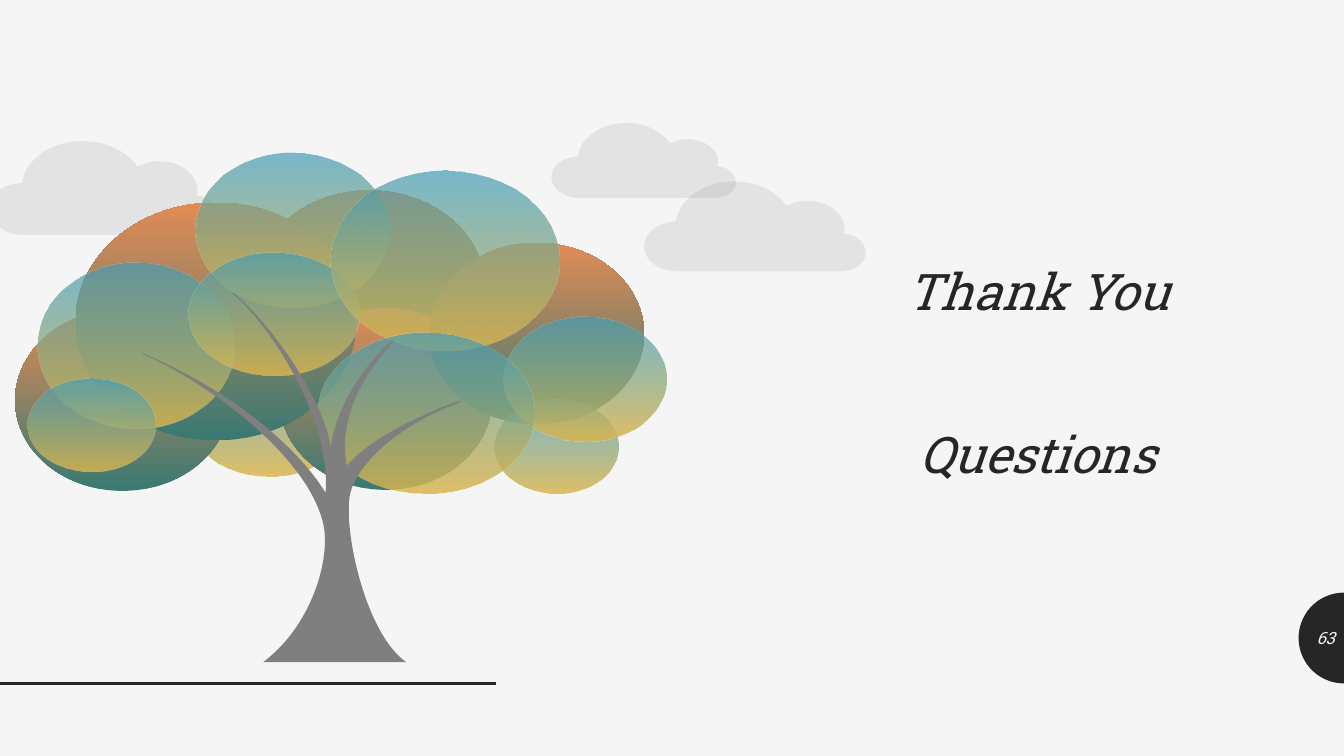
import math
from dataclasses import dataclass

import pptx
import pptx.dml.color
import pptx.enum.shapes
import pptx.enum.text
import pptx.oxml
import pptx.oxml.ns
import pptx.oxml.xmlchemy
import pptx.slide
import pptx.util

COLORS: dict[str, str] = {
    "paper": "F5F5F5",
    "ink": "262626",
    "gray": "7F7F7F",
    "teal": "397972",
    "orange": "E28B55",
    "gold": "DCB64D",
    "blue": "439EB7",
}
FONT = "Roboto Slab"
ROWS = 75
SLIDE_HEIGHT = pptx.util.Inches(7.5)
SLIDE_WIDTH = pptx.util.Inches(13.333)
CELL = SLIDE_HEIGHT / ROWS  # square cells; all positions below count them
COLUMNS = SLIDE_WIDTH / CELL

Point = tuple[float, float]
# One point ends a straight segment; three are a Bezier's handles and end.
Segment = tuple[Point, ...]


@dataclass(frozen=True)
class Area:
    column: float
    row: float
    columns: float
    rows: float

    def lengths(self) -> tuple[pptx.util.Emu, ...]:
        return tuple(cells(n) for n in (self.column, self.row, self.columns, self.rows))


@dataclass(frozen=True)
class Foliage:
    bottom: str
    top: str
    bottom_opacity: int
    top_opacity: int


@dataclass(frozen=True)
class Placement:
    column: float = 0
    row: float = 0
    size: float = 1


@dataclass(frozen=True)
class Lettering:
    size: float
    color: str
    align: pptx.enum.text.PP_ALIGN
    anchor: pptx.enum.text.MSO_ANCHOR
    line_spacing: float = 1.0
    gap: float = 0


AUTUMN = Foliage("teal", "orange", 100, 100)
SUMMER = Foliage("gold", "blue", 85, 70)
CROWN: list[tuple[Foliage, list[Area]]] = [
    (SUMMER, [Area(18.6, 34.9, 16.2, 12.4)]),
    (AUTUMN, [
        Area(25.2, 18.9, 22.9, 19.3),
        Area(27.7, 30.6, 21.1, 18),
        Area(1.5, 30.7, 21.3, 18),
        Area(42.6, 24.1, 21.3, 18),
        Area(7.5, 20.1, 27.8, 23.6),
    ]),
    (SUMMER, [
        Area(3.7, 26.1, 19.6, 16.4),
        Area(19.4, 15.1, 19.1, 15.4),
        Area(49.1, 39.6, 12.3, 9.4),
        Area(18.7, 25.1, 17, 12.2),
        Area(2.7, 37.6, 12.7, 9.2),
        Area(32.8, 16.9, 22.7, 17.9),
        Area(49.9, 31.4, 16.2, 12.4),
        Area(31.5, 33, 21.5, 16),
    ]),
]

CLOUD_OUTLINE: list[Segment] = [
    ((9.3, 0),),
    ((11.4, 0), (13.2, 0.8), (14.3, 2)),
    ((14.7, 2.5),),
    ((15.3, 2.3),),
    ((15.8, 2.1), (16.3, 2), (16.8, 2)),
    ((19, 2), (20.7, 3.3), (20.7, 4.9)),
    ((20.6, 5.4),),
    ((21.3, 5.5),),
    ((22.2, 5.8), (22.9, 6.5), (22.9, 7.4)),
    ((22.9, 8.5), (21.7, 9.3), (20.2, 9.3)),
    ((3.5, 9.3),),
    ((1.6, 9.3), (0, 8.2), (0, 6.7)),
    ((0, 5.5), (1.2, 4.4), (2.8, 4.2)),
    ((3.3, 4.1),),
    ((3.4, 3.6),),
    ((4, 1.6), (6.4, 0), (9.3, 0)),
]
LEFT_CLOUD = Placement(-1.1, 14, 1)
RIGHT_CLOUDS = [Placement(63.9, 18, 0.96), Placement(54.7, 12.2, 0.8)]

TRUNK_OUTLINE: list[Segment] = [
    ((40.3, 65.7),),
    ((36.3, 62.9), (34.1, 52.9), (34.7, 49.2)),
    ((35.4, 45.4), (41.2, 41.4), (45.5, 40)),
    ((45.8, 39.8), (45.8, 39.7), (45.5, 39.8)),
    ((45.3, 39.8), (37.5, 42.6), (34.4, 46.2)),
    ((33.4, 40.6), (37, 36.2), (39, 33.9)),
    ((39.1, 33.8), (39, 33.7), (38.8, 33.8)),
    ((37.5, 35), (33.6, 39.1), (32.8, 44.3)),
    ((32.1, 39.5), (26.7, 31.9), (23.1, 29)),
    ((23.1, 29), (23, 29.2), (23.1, 29.2)),
    ((26.1, 31.5), (32.9, 41), (32.3, 48.9)),
    ((29.5, 44.3), (23, 38.8), (14.1, 35)),
    ((14, 35), (14, 35.1), (14.1, 35.1)),
    ((20.5, 37.9), (30.6, 45.2), (32.1, 52.1)),
    ((32.8, 55.7), (30.8, 62.2), (26.1, 65.7)),
]

BADGE_ROW, BADGE_RADIUS, BADGE_STEPS = 63.3, 4.5, 48
BADGE_OUTLINE: list[Segment] = [
    ((COLUMNS - BADGE_RADIUS * math.sin(math.pi * step / BADGE_STEPS),
      BADGE_ROW - BADGE_RADIUS * math.cos(math.pi * step / BADGE_STEPS)),)
    for step in range(BADGE_STEPS + 1)
]


def cells(count: float) -> pptx.util.Emu:
    return pptx.util.Emu(round(count * CELL))


def rgb(name: str) -> pptx.dml.color.RGBColor:
    return pptx.dml.color.RGBColor.from_string(COLORS[name])


def set_opacity(fill: pptx.oxml.xmlchemy.BaseOxmlElement, percent: int) -> None:
    if percent < 100:
        alpha = pptx.oxml.parse_xml(f'<a:alpha {pptx.oxml.ns.nsdecls("a")} val="{percent * 1000}"/>')
        fill.xpath(".//a:srgbClr")[0].append(alpha)


def bend(figure: pptx.oxml.xmlchemy.BaseOxmlElement, outline: list[Segment]) -> None:
    """Join the straight steps through each curve's handles into one Bezier."""
    steps = iter(figure.xpath(".//a:lnTo"))
    for segment in outline[1:]:
        parts = [next(steps) for _ in segment]
        if len(parts) == 3:
            curve = pptx.oxml.parse_xml(f'<a:cubicBezTo {pptx.oxml.ns.nsdecls("a")}/>')
            parts[0].addprevious(curve)
            for part in parts:
                curve.append(part[0])
                part.getparent().remove(part)


def draw_outline(slide: pptx.slide.Slide, outline: list[Segment], color: str, opacity: int = 100,
                 place: Placement = Placement()) -> None:
    points = [(cells(place.column + x * place.size), cells(place.row + y * place.size))
              for segment in outline for x, y in segment]
    builder = slide.shapes.build_freeform(*points[0])
    builder.add_line_segments(points[1:], close=True)
    figure = builder.convert_to_shape()
    bend(figure.element, outline)
    figure.shadow.inherit = False
    figure.line.fill.background()
    figure.fill.solid()
    figure.fill.fore_color.rgb = rgb(color)
    set_opacity(figure.element.spPr, opacity)


def draw_leaves(slide: pptx.slide.Slide, area: Area, foliage: Foliage) -> None:
    leaves = slide.shapes.add_shape(pptx.enum.shapes.MSO_SHAPE.OVAL, *area.lengths())
    leaves.shadow.inherit = False
    leaves.line.fill.background()
    leaves.fill.gradient()
    leaves.fill.gradient_angle = 90
    ends = ((foliage.bottom, foliage.bottom_opacity), (foliage.top, foliage.top_opacity))
    stops = zip(leaves.fill.gradient_stops, leaves.element.xpath(".//a:gs"), ends)
    for stop, stop_xml, (color, opacity) in stops:
        stop.color.rgb = rgb(color)
        set_opacity(stop_xml, opacity)


def draw_ground(slide: pptx.slide.Slide) -> None:
    ground = slide.shapes.add_connector(pptx.enum.shapes.MSO_CONNECTOR.STRAIGHT,
                                        0, cells(67.8), cells(49.2), cells(67.8))
    ground.line.color.rgb = rgb("ink")
    ground.line.width = pptx.util.Pt(2)
    ground.element.spPr.append(pptx.oxml.parse_xml(f'<a:effectLst {pptx.oxml.ns.nsdecls("a")}/>'))


def write(slide: pptx.slide.Slide, area: Area, lines: list[str], style: Lettering) -> None:
    frame = slide.shapes.add_textbox(*area.lengths()).text_frame
    frame.word_wrap = True
    frame.vertical_anchor = style.anchor
    frame.text = "\n".join(lines)
    for index, paragraph in enumerate(frame.paragraphs):
        paragraph.alignment = style.align
        paragraph.line_spacing = style.line_spacing
        paragraph.space_before = pptx.util.Pt(style.gap if index else 0)
        font = paragraph.runs[0].font
        font.name, font.size, font.italic = FONT, pptx.util.Pt(style.size), True
        font.color.rgb = rgb(style.color)


def main() -> None:
    deck = pptx.Presentation()
    deck.slide_width, deck.slide_height = SLIDE_WIDTH, SLIDE_HEIGHT
    slide = deck.slides.add_slide(deck.slide_layouts[6])
    slide.background.fill.solid()
    slide.background.fill.fore_color.rgb = rgb("paper")

    draw_outline(slide, BADGE_OUTLINE, "ink")
    draw_ground(slide)
    draw_outline(slide, CLOUD_OUTLINE, "gray", 15, LEFT_CLOUD)
    for foliage, areas in CROWN:
        for area in areas:
            draw_leaves(slide, area, foliage)
    draw_outline(slide, TRUNK_OUTLINE, "gray")
    for cloud in RIGHT_CLOUDS:
        draw_outline(slide, CLOUD_OUTLINE, "gray", 15, cloud)

    align, anchor = pptx.enum.text.PP_ALIGN, pptx.enum.text.MSO_ANCHOR
    write(slide, Area(73, 26, 59.9, 40.7), ["Thank You", "Questions"],
          Lettering(36, "ink", align.CENTER, anchor.TOP, 0.9, 77.5))
    write(slide, Area(128.9, 61.3, 4.5, 4), ["63"],
          Lettering(12, "paper", align.RIGHT, anchor.MIDDLE))
    deck.save("out.pptx")


if __name__ == "__main__":
    main()
